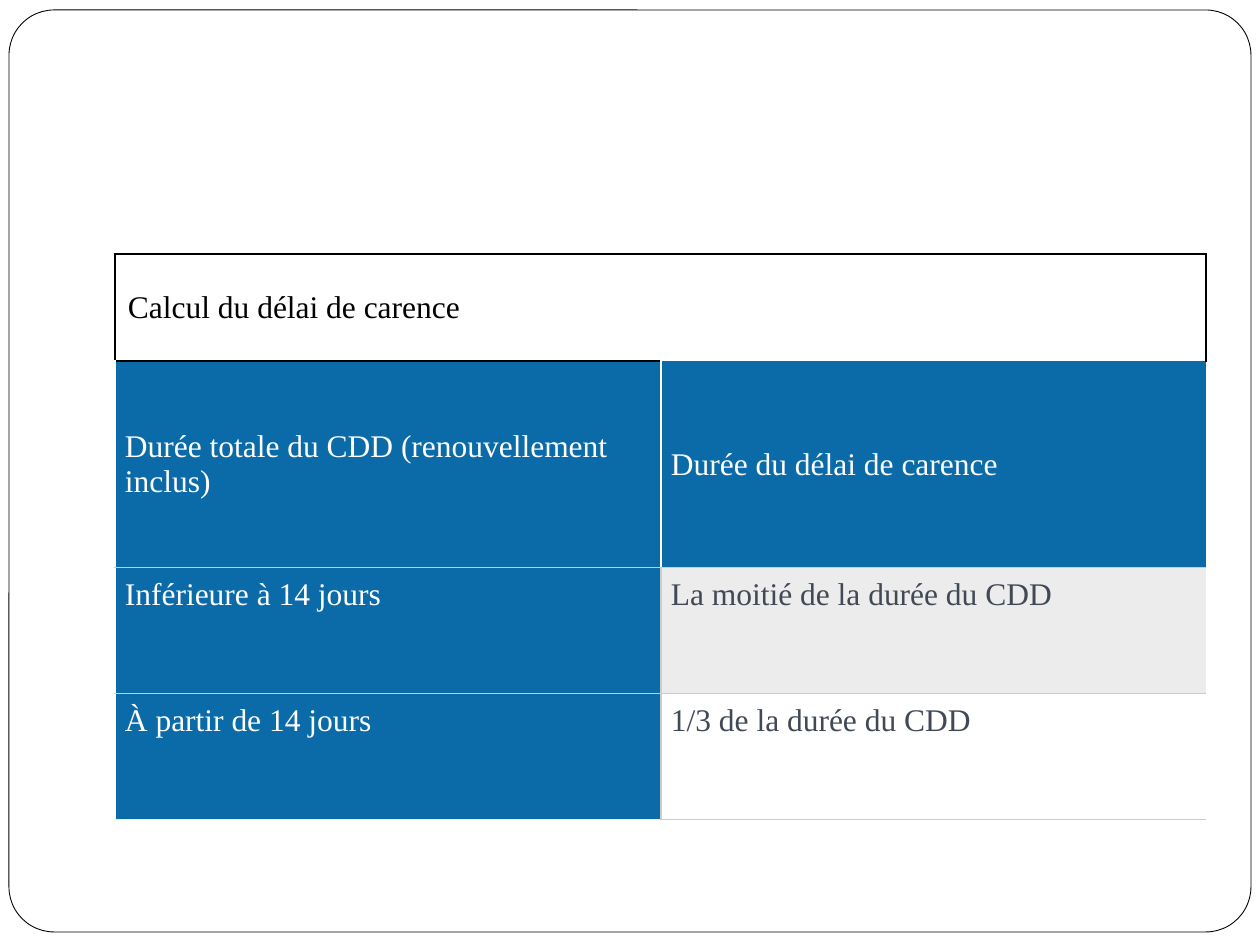
from dataclasses import dataclass

from lxml import etree
from pptx import Presentation
from pptx import util as u
from pptx.dml.color import RGBColor
from pptx.enum import shapes, text
from pptx.oxml import ns


@dataclass(frozen=True)
class Theme:
    font: str = "Times New Roman"
    size: int = 18
    edge: float = 0.5
    rule: float = 0.75
    bold: float = 1
    black: str = "000000"
    white: str = "FFFFFF"
    blue: str = "0B6BA8"
    pale: str = "ECECEC"
    slate: str = "414856"
    grey: str = "CCCCCC"
    mist: str = "F2F2F2"


def px(n):
    return u.Emu(round(n * 914400 / 126))


def apply(item, form):
    for name, value in form.items():
        setattr(item, name, value)


class Deck:
    def __init__(self, theme):
        self.theme = theme
        self.file = Presentation()
        apply(self.file, {"slide_width": px(1260), "slide_height": px(945)})
        self.slide = self.file.slides.add_slide(self.file.slide_layouts[6])

    def paint(self, fill, color):
        fill.solid()
        fill.fore_color.rgb = RGBColor.from_string(color)

    def frame(self, box, round_by):
        kind = shapes.MSO_SHAPE.ROUNDED_RECTANGLE
        shape = self.slide.shapes.add_shape(kind, *map(px, box))
        shape.adjustments[0] = round_by
        shape.shadow.inherit = False
        self.paint(shape.fill, self.theme.white)
        self.paint(shape.line.fill, self.theme.black)
        shape.line.width = u.Pt(self.theme.edge)

    def grid(self, left, top, cols, rows):
        size = len(rows), len(cols)
        box = left, top, sum(cols), sum(rows)
        table = self.slide.shapes.add_table(*size, *map(px, box)).table
        apply(table, {"first_row": False, "horz_banding": False})
        for col, width in zip(table.columns, cols):
            col.width = px(width)
        for row, height in zip(table.rows, rows):
            row.height = px(height)
        return table

    def cell(self, cell, words, ink, fill, rules, pads=(10, 10), middle=False):
        side, end = map(px, pads)
        anchor = text.MSO_ANCHOR
        apply(cell, {
            "text": words,
            "margin_left": side, "margin_right": side,
            "margin_top": end, "margin_bottom": end,
            "vertical_anchor": anchor.MIDDLE if middle else anchor.TOP,
        })
        font = cell.text_frame.paragraphs[0].font
        apply(font, {"name": self.theme.font, "size": u.Pt(self.theme.size), "bold": False})
        font.color.rgb = RGBColor.from_string(ink)
        self.paint(cell.fill, fill)
        self.rule(cell, rules)

    def rule(self, cell, rules):
        props = cell._tc.get_or_add_tcPr()
        for spot, side in enumerate("LRTB"):
            line = etree.Element(ns.qn(f"a:ln{side}"))
            props.insert(spot, line)
            if side not in rules:
                etree.SubElement(line, ns.qn("a:noFill"))
                continue
            color, width = rules[side]
            line.set("w", str(u.Pt(width)))
            fill = etree.SubElement(line, ns.qn("a:solidFill"))
            etree.SubElement(fill, ns.qn("a:srgbClr")).set("val", color)

    def save(self):
        self.file.save("out.pptx")


def main():
    t = Theme()
    deck = Deck(t)
    deck.frame((9, 10, 1242, 922), 0.049)
    table = deck.grid(115, 254, [546, 545], [107, 207, 126, 126])

    dark = t.black, t.bold
    white, grey, mist = ((color, t.rule) for color in (t.white, t.grey, t.mist))
    title = table.cell(0, 0)
    title.merge(table.cell(0, 1))
    deck.cell(title, "Calcul du délai de carence", t.black, t.white,
              dict.fromkeys("LRTB", dark), (13, 6), True)
    deck.rule(table.cell(0, 1), {"T": dark, "R": dark})

    heads = ["Durée totale du CDD (renouvellement inclus)", "Durée du délai de carence"]
    edges = [{"L": white, "R": white, "T": dark, "B": grey}, {"L": white, "B": grey}]
    for col, (words, rules) in enumerate(zip(heads, edges)):
        deck.cell(table.cell(1, col), words, t.white, t.blue, rules, middle=True)

    body = [
        ("Inférieure à 14 jours", "La moitié de la durée du CDD", t.pale, grey),
        ("À partir de 14 jours", "1/3 de la durée du CDD", t.white, mist),
    ]
    for row, (term, delay, fill, base) in enumerate(body, 2):
        deck.cell(table.cell(row, 0), term, t.white, t.blue,
                  {"L": white, "R": grey, "T": grey, "B": base})
        deck.cell(table.cell(row, 1), delay, t.slate, fill, dict.fromkeys("LTB", grey))
    deck.save()


if __name__ == "__main__":
    main()
